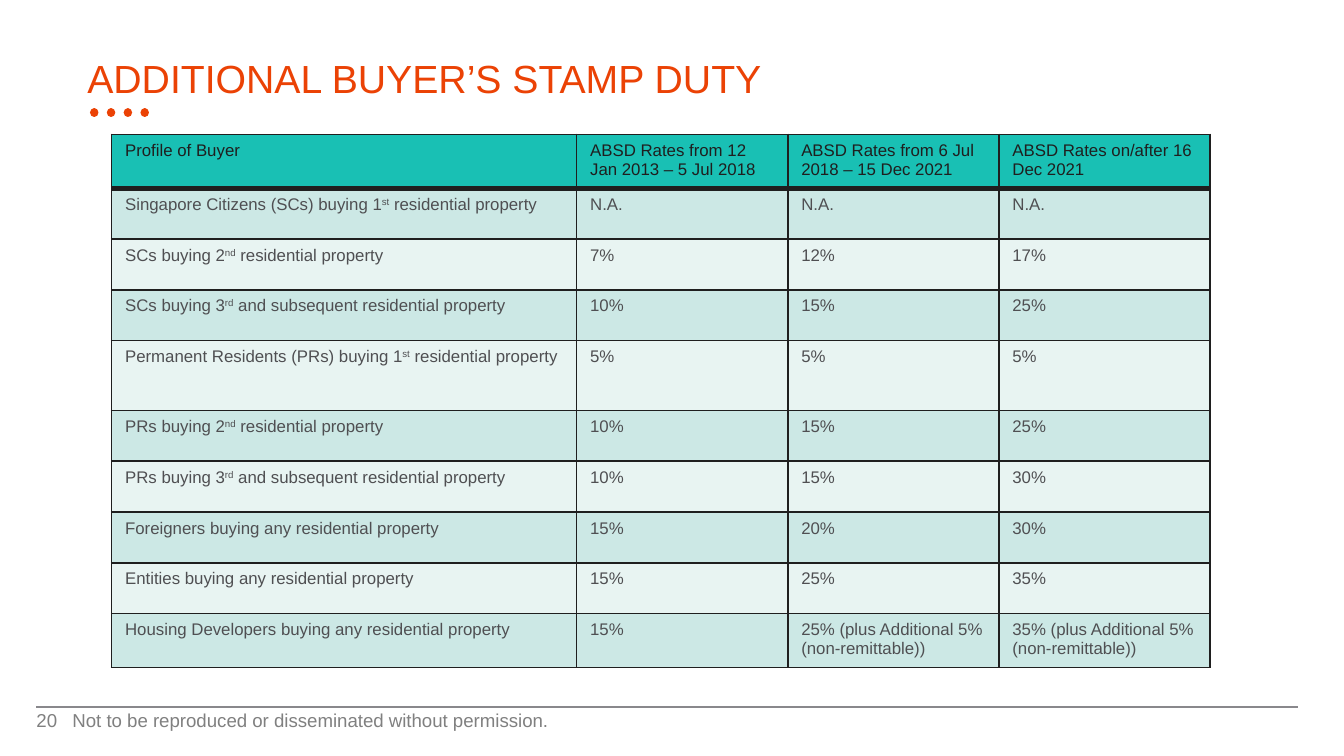
from dataclasses import dataclass

import pptx
import pptx.dml.color
import pptx.enum.dml
import pptx.enum.shapes
import pptx.enum.text
import pptx.oxml
import pptx.oxml.ns
import pptx.util
from pptx.util import Cm


@dataclass(frozen=True)
class Theme:
    font: str = "Arial"
    accent: str = "EB4205"
    ink: str = "1F1F1F"
    body: str = "4F4F52"
    footer: str = "808080"
    rule: str = "89888C"
    header: str = "19C0B4"
    bands: tuple[str, str] = ("CCE8E5", "E8F4F2")
    title_size: float = 21
    footer_size: float = 10
    table_size: float = 9


@dataclass(frozen=True)
class Rate:
    buyer: str
    from_2013: str
    from_2018: str
    from_2021: str
    ordinal: str = ""
    rest: str = ""
    height: float = 0.96


@dataclass(frozen=True)
class Rule:
    left: float
    right: float
    y: float
    color: str
    width: float
    dotted: bool = False


@dataclass(frozen=True)
class Note:
    text: str
    left: float
    top: float
    width: float
    height: float
    inset_x: float = 0
    inset_y: float = 0


THEME = Theme()
HEADINGS = ("Profile of Buyer", "ABSD Rates from 12 Jan 2013 – 5 Jul 2018",
            "ABSD Rates from 6 Jul 2018 – 15 Dec 2021", "ABSD Rates on/after 16 Dec 2021")
COLUMNS = (8.79, 3.99, 3.99, 3.99)
HEADER_HEIGHT = 0.96
HOME = " residential property"
MORE_HOMES = " and subsequent residential property"
RATES = (
    Rate("Singapore Citizens (SCs) buying 1", "N.A.", "N.A.", "N.A.", "st", HOME),
    Rate("SCs buying 2", "7%", "12%", "17%", "nd", HOME),
    Rate("SCs buying 3", "10%", "15%", "25%", "rd", MORE_HOMES),
    Rate("Permanent Residents (PRs) buying 1", "5%", "5%", "5%", "st", HOME, 1.32),
    Rate("PRs buying 2", "10%", "15%", "25%", "nd", HOME),
    Rate("PRs buying 3", "10%", "15%", "30%", "rd", MORE_HOMES),
    Rate("Foreigners buying any residential property", "15%", "20%", "30%"),
    Rate("Entities buying any residential property", "15%", "25%", "35%"),
    Rate("Housing Developers buying any residential property", "15%",
         "25% (plus Additional 5% (non-remittable))",
         "35% (plus Additional 5% (non-remittable))"),
)
RULES = (
    Rule(1.78, 2.79, 2.13, THEME.accent, 4.5, dotted=True),
    Rule(0.69, 24.54, 13.36, THEME.rule, 1),
)
NOTES = (
    Note("Not to be reproduced or disseminated without permission.",
         1.12, 13.26, 10.13, 0.69, 0.25, 0.13),
    Note("20", 0.69, 13.39, 0.74, 0.46),
)


def rgb(color: str) -> pptx.dml.color.RGBColor:
    return pptx.dml.color.RGBColor.from_string(color)


def add_run(p, text: str, size: float, color: str, raised: bool = False) -> None:
    r = p.add_run()
    r.text = text
    r.font.name = THEME.font
    r.font.size = pptx.util.Pt(size)
    r.font.color.rgb = rgb(color)
    if raised:
        r.font._element.set("baseline", "30000")


def set_insets(tf, x: float, y: float) -> None:
    tf.margin_left = tf.margin_right = Cm(x)
    tf.margin_top = tf.margin_bottom = Cm(y)


def add_title(s, text: str) -> None:
    sp = s.shapes.title
    sp.left, sp.top, sp.width, sp.height = Cm(1.65), Cm(0.99), Cm(16.76), Cm(1.07)
    tf = sp.text_frame
    set_insets(tf, 0, 0.13)
    tf.word_wrap = True
    tf.auto_size = pptx.enum.text.MSO_AUTO_SIZE.SHAPE_TO_FIT_TEXT
    tf.vertical_anchor = pptx.enum.text.MSO_ANCHOR.MIDDLE
    p = tf.paragraphs[0]
    p.alignment = pptx.enum.text.PP_ALIGN.LEFT
    p.line_spacing = 0.9
    add_run(p, text, THEME.title_size, THEME.accent)


def add_rule(s, rule: Rule) -> None:
    line = s.shapes.add_connector(pptx.enum.shapes.MSO_CONNECTOR.STRAIGHT,
                                  Cm(rule.left), Cm(rule.y), Cm(rule.right), Cm(rule.y))
    line.line.color.rgb = rgb(rule.color)
    line.line.width = pptx.util.Pt(rule.width)
    if rule.dotted:
        line.line.dash_style = pptx.enum.dml.MSO_LINE.ROUND_DOT
        line.line._ln.set("cap", "rnd")
    pr = line._element.spPr
    pr.append(pr.makeelement(pptx.oxml.ns.qn("a:effectLst"), {}))


def add_note(s, note: Note) -> None:
    sp = s.shapes.add_textbox(Cm(note.left), Cm(note.top), Cm(note.width), Cm(note.height))
    tf = sp.text_frame
    tf.word_wrap = True
    set_insets(tf, note.inset_x, note.inset_y)
    add_run(tf.paragraphs[0], note.text, THEME.footer_size, THEME.footer)


def style_cell(cell, fill: str, bottom: float = 1) -> None:
    pr = cell._tc.get_or_add_tcPr()
    for side, width in (("L", 1), ("R", 1), ("T", 1), ("B", bottom)):
        pr.append(pptx.oxml.parse_xml(
            f'<a:ln{side} {pptx.oxml.ns.nsdecls("a")} w="{pptx.util.Pt(width)}">'
            f'<a:solidFill><a:srgbClr val="{THEME.ink}"/></a:solidFill></a:ln{side}>'))
    cell.fill.solid()
    cell.fill.fore_color.rgb = rgb(fill)


def add_rates(s, rates: tuple[Rate, ...]) -> None:
    heights = [HEADER_HEIGHT] + [rate.height for rate in rates]
    table = s.shapes.add_table(len(heights), len(COLUMNS), Cm(2.11), Cm(2.54),
                               Cm(sum(COLUMNS)), Cm(sum(heights))).table
    table.first_row = table.horz_banding = False
    for column, width in zip(table.columns, COLUMNS):
        column.width = Cm(width)
    for row, height in zip(table.rows, heights):
        row.height = Cm(height)
    for i, heading in enumerate(HEADINGS):
        cell = table.cell(0, i)
        style_cell(cell, THEME.header, bottom=3)
        add_run(cell.text_frame.paragraphs[0], heading, THEME.table_size, THEME.ink)
    for n, rate in enumerate(rates):
        for i, text in enumerate((rate.buyer, rate.from_2013, rate.from_2018, rate.from_2021)):
            cell = table.cell(n + 1, i)
            style_cell(cell, THEME.bands[n % 2])
            p = cell.text_frame.paragraphs[0]
            add_run(p, text, THEME.table_size, THEME.body)
            if i == 0 and rate.ordinal:
                add_run(p, rate.ordinal, THEME.table_size, THEME.body, raised=True)
                add_run(p, rate.rest, THEME.table_size, THEME.body)


def main() -> None:
    prs = pptx.Presentation()
    prs.slide_width, prs.slide_height = Cm(25.4), Cm(14.29)
    s = prs.slides.add_slide(prs.slide_layouts.get_by_name("Title Only"))
    for rule in RULES:
        add_rule(s, rule)
    for note in NOTES:
        add_note(s, note)
    add_title(s, "ADDITIONAL BUYER’S STAMP DUTY")
    add_rates(s, RATES)
    prs.save("out.pptx")


if __name__ == "__main__":
    main()
